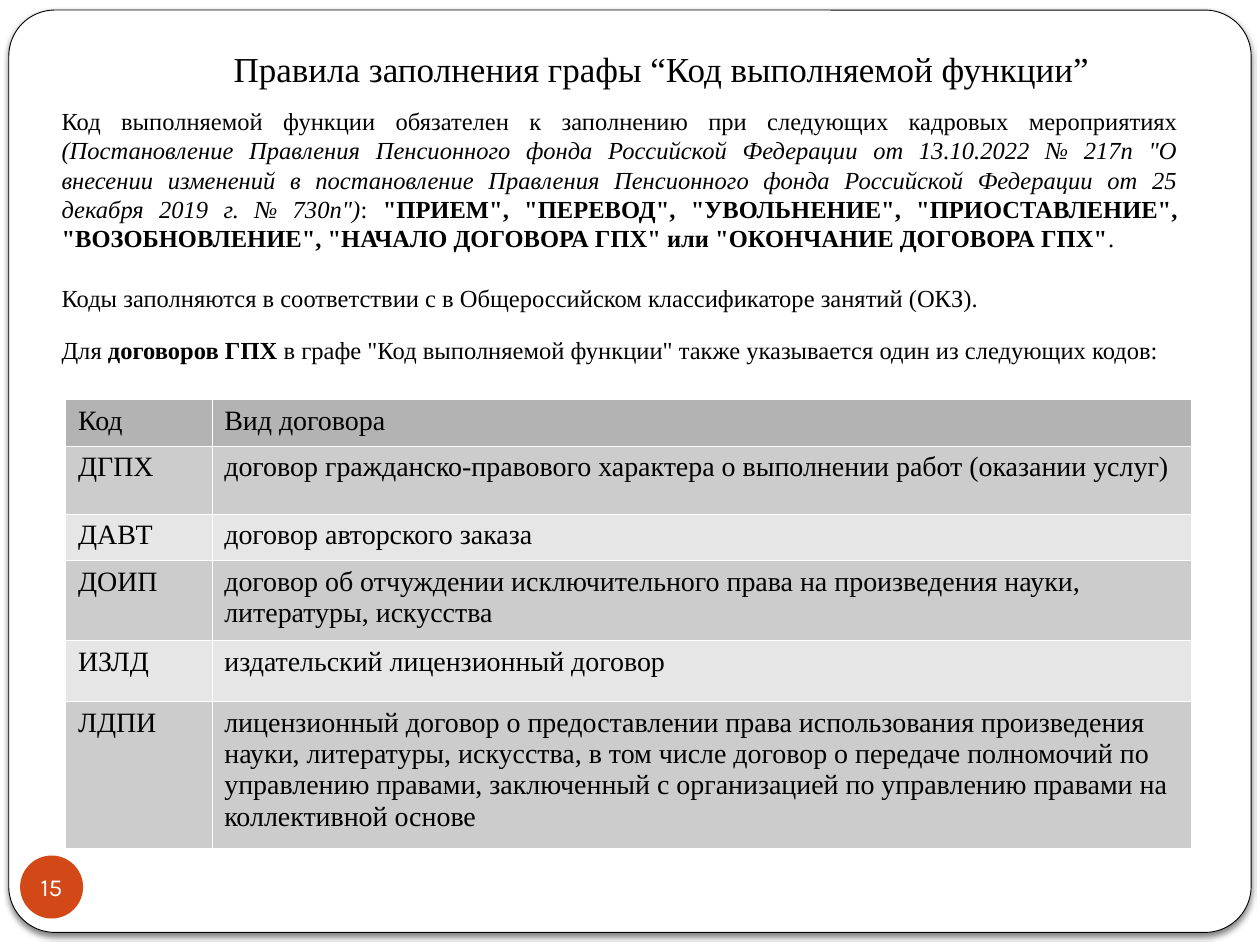
from collections import namedtuple
from lxml.etree import SubElement
from pptx import Presentation
from pptx.dml.color import RGBColor
from pptx.enum.shapes import MSO_SHAPE as Shape
from pptx.enum.text import MSO_ANCHOR as Anchor, PP_ALIGN as Align
from pptx.oxml import parse_xml
from pptx.oxml.ns import nsdecls, qn
from pptx.util import Inches, Pt

COLORS = {
    "paper": "FFFFFF", "ink": "000000", "badge": "D34817",
    "header": "B3B3B3", "odd": "CCCCCC", "even": "E6E6E6",
}
SERIF, SANS = "Times New Roman", "Karla"
COLUMNS, ROWS, UNIT = 100, 75, Inches(0.1)
Box = namedtuple("Box", "left top width height")

EVENTS = [
    ("Код выполняемой функции обязателен к заполнению при следующих кадровых мероприятиях ", {}),
    ("(Постановление Правления Пенсионного фонда Российской Федерации от 13.10.2022 № 217п "
     "\"О внесении изменений в постановление Правления Пенсионного фонда Российской Федерации "
     "от 25 декабря 2019 г. № 730п\")", {"italic": True}),
    (": ", {}),
    ("\"ПРИЕМ\", \"ПЕРЕВОД\", \"УВОЛЬНЕНИЕ\", \"ПРИОСТАВЛЕНИЕ\", \"ВОЗОБНОВЛЕНИЕ\", "
     "\"НАЧАЛО ДОГОВОРА ГПХ\" или \"ОКОНЧАНИЕ ДОГОВОРА ГПХ\"", {"bold": True}),
    (".", {}),
]
CLASSIFIER = [
    ("Коды заполняются в соответствии с в Общероссийском классификаторе занятий (ОКЗ).", {}),
]
CONTRACTS = [
    ("Для ", {}),
    ("договоров ГПХ", {"bold": True}),
    (" в графе \"Код выполняемой функции\" также указывается один из следующих кодов:", {}),
]
CODES = [
    ("Код", "Вид договора", 3.4),
    ("ДГПХ", "договор гражданско-правового характера о выполнении работ (оказании услуг)", 5.4),
    ("ДАВТ", "договор авторского заказа", 3.6),
    ("ДОИП", "договор об отчуждении исключительного права на произведения науки, "
             "литературы, искусства", 5.9),
    ("ИЗЛД", "издательский лицензионный договор", 4.9),
    ("ЛДПИ", "лицензионный договор о предоставлении права использования произведения науки, "
             "литературы, искусства, в том числе договор о передаче полномочий по управлению "
             "правами, заключенный с организацией по управлению правами на коллективной основе", 11),
]


def emu(box):
    return [round(side * UNIT) for side in box]


def apply(target, values):
    for key, value in values.items():
        setattr(target, key, value)


def paint(fill, color):
    fill.solid()
    fill.fore_color.rgb = RGBColor.from_string(COLORS[color])


def write(paragraph, runs, size, align=Align.LEFT, font=SERIF, color="ink", before=0):
    apply(paragraph, {"alignment": align, "space_before": Pt(before)})
    for text, style in runs:
        run = paragraph.add_run()
        run.text = text
        apply(run.font, {"name": font, "size": Pt(size), "bold": False, "italic": False, **style})
        run.font.color.rgb = RGBColor.from_string(COLORS[color])


def center(frame):
    apply(frame, {"margin_left": 0, "margin_right": 0, "margin_top": 0, "margin_bottom": 0,
                  "vertical_anchor": Anchor.MIDDLE, "word_wrap": True})


def add_card(slide, box):
    card = slide.shapes.add_shape(Shape.ROUNDED_RECTANGLE, *emu(box))
    card.adjustments[0] = 0.05
    paint(card.fill, "paper")
    paint(card.line.fill, "ink")
    card.line.width = Pt(0.5)
    properties = card.element.spPr
    properties.append(parse_xml(
        f'<a:effectLst {nsdecls("a")}>'
        f'<a:outerShdw blurRad="{Pt(3)}" dist="{Pt(2)}" dir="5400000" rotWithShape="0">'
        f'<a:srgbClr val="{COLORS["ink"]}"><a:alpha val="50000"/></a:srgbClr>'
        '</a:outerShdw></a:effectLst>'))
    slide.shapes.element.insert(2, card.element)


def add_title(slide, box):
    title = slide.shapes.title
    apply(title, dict(zip(("left", "top", "width", "height"), emu(box))))
    center(title.text_frame)
    write(title.text_frame.paragraphs[0],
          [("Правила заполнения графы “Код выполняемой функции”", {})], 20, Align.CENTER)


def add_rules(slide, box, paragraphs):
    frame = slide.shapes.add_textbox(*emu(box)).text_frame
    frame.word_wrap = True
    for index, runs in enumerate(paragraphs):
        paragraph = frame.add_paragraph() if index else frame.paragraphs[0]
        write(paragraph, runs, 14, Align.JUSTIFY, before=17 if index else 0)


def add_borders(cell):
    properties = cell._tc.get_or_add_tcPr()
    for index, side in enumerate(("lnL", "lnR", "lnT", "lnB")):
        border = parse_xml(
            f'<a:{side} {nsdecls("a")} w="{Pt(0.06)}"/>')
        fill = SubElement(border, qn("a:solidFill"))
        SubElement(fill, qn("a:srgbClr"), val=COLORS["paper"])
        properties.insert(index, border)


def add_codes(slide, box):
    table = slide.shapes.add_table(len(CODES), 2, *emu(box)).table
    apply(table, {"first_row": False, "horz_banding": False})
    code_width = 0.13 * box.width
    for column, width in zip(table.columns, (code_width, box.width - code_width)):
        column.width = round(width * UNIT)
    for row, (code, contract, height) in enumerate(CODES):
        table.rows[row].height = round(height * UNIT)
        shade = "header" if row == 0 else ("even", "odd")[row % 2]
        for column, text in enumerate((code, contract)):
            cell = table.cell(row, column)
            paint(cell.fill, shade)
            write(cell.text_frame.paragraphs[0], [(text, {})], 16)
            add_borders(cell)


def add_page_number(slide, box):
    badge = slide.shapes.add_shape(Shape.OVAL, *emu(box))
    badge.shadow.inherit = False
    paint(badge.fill, "badge")
    badge.line.fill.background()
    center(badge.text_frame)
    write(badge.text_frame.paragraphs[0], [("15", {})], 14, Align.CENTER, SANS, "paper")


def main():
    deck = Presentation()
    apply(deck, {"slide_width": COLUMNS * UNIT, "slide_height": ROWS * UNIT})
    slide = deck.slides.add_slide(deck.slide_layouts[5])
    paint(slide.background.fill, "paper")
    add_card(slide, Box(0.7, 0.8, 98.6, 73.2))
    add_title(slide, Box(10, 3, 85, 4.9))
    add_rules(slide, Box(3.9, 7.9, 90.6, 18.3), [EVENTS, CLASSIFIER])
    add_rules(slide, Box(3.9, 26.1, 90.6, 5.3), [CONTRACTS])
    add_codes(slide, Box(5.2, 31.7, 89.3, 34.2))
    add_page_number(slide, Box(1.6, 67.9, 5, 5))
    deck.save("out.pptx")


if __name__ == "__main__":
    main()
